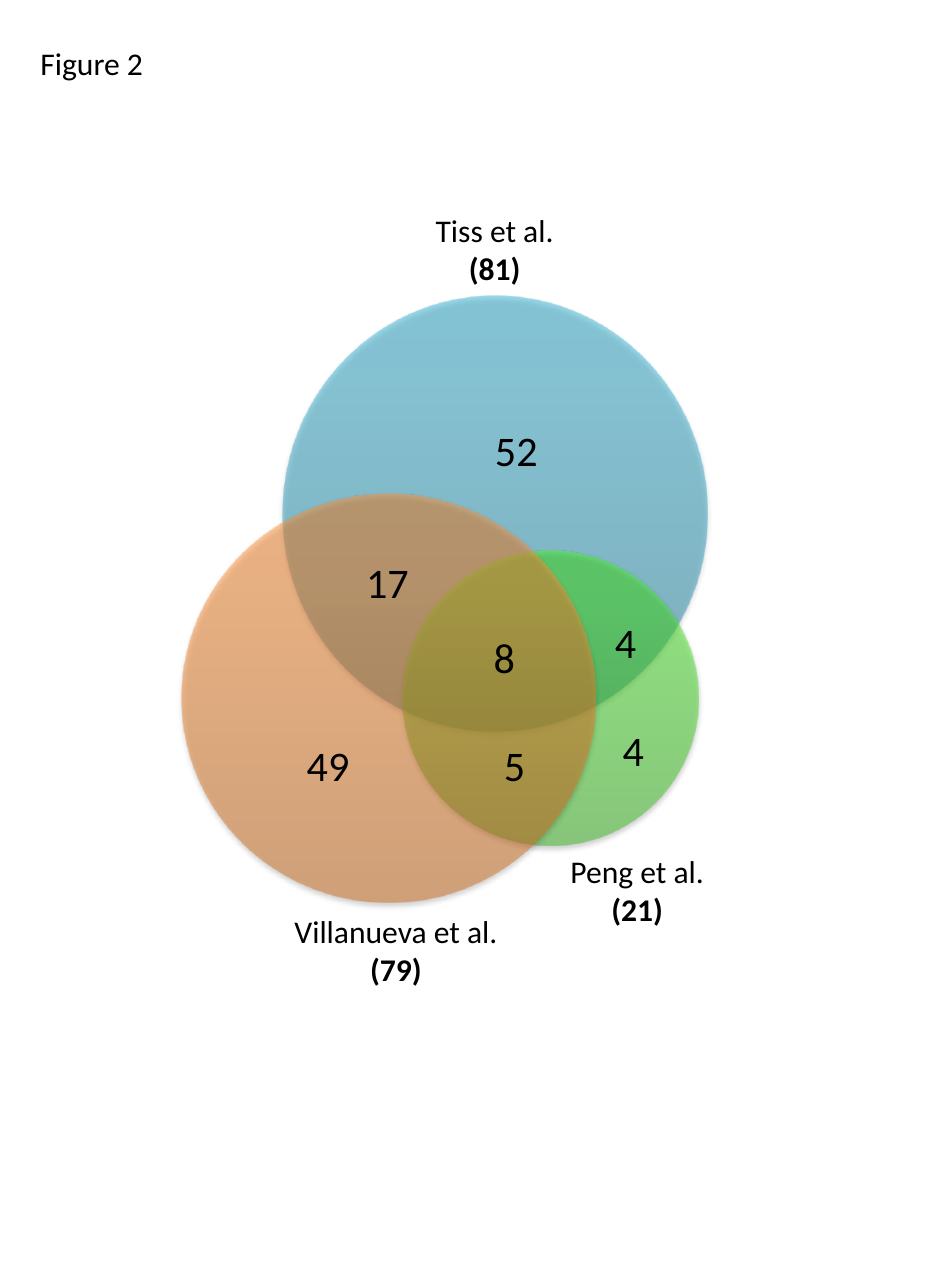
from pptx import Presentation, oxml
from pptx import util as u
from pptx.dml.color import RGBColor
from pptx.enum import shapes, text
from pptx.oxml.ns import nsdecls

# Content: sizes are left, top, width, height in inches
SLIDE_SIZE = (7.52, 10.2)
TITLE = ("Figure 2", (0.22, 0.3, 1.02, 0.4))
CIRCLES = [  # box, gradient colours from bottom to top
    ((2.24, 2.34, 3.36, 3.45), ("2A88A2", "37B1D2", "34B4D6")),
    ((3.19, 4.36, 2.34, 2.34), ("3CB923", "4EF02E", "4CF52A")),
    ((1.44, 3.91, 3.27, 3.24), ("CC6E20", "FF9034", "FF9136")),
]
STUDIES = [  # name, total, left, top, width
    ("Tiss et al.", "(81)", 3.34, 1.62, 1.15),
    ("Peng et al.", "(21)", 4.41, 6.7, 1.27),
    ("Villanueva et al.", "(79)", 2.22, 7.17, 1.83),
]
COUNTS = [  # number, left, top
    ("4", 4.77, 4.83), ("17", 2.8, 4.36), ("5", 3.89, 5.81), ("8", 3.81, 4.95),
    ("49", 2.33, 5.81), ("52", 3.82, 3.31), ("4", 4.83, 5.69),
]
STOPS = (0, 80, 100)
COUNT_WIDTHS = {1: 0.37, 2: 0.54}  # by number of digits
STUDY_HEIGHT, COUNT_HEIGHT = 0.71, 0.5
FRAME_FORMAT = {
    "word_wrap": False,
    "auto_size": text.MSO_AUTO_SIZE.SHAPE_TO_FIT_TEXT,
    "vertical_anchor": text.MSO_ANCHOR.TOP,
}


def color(value):
    return RGBColor.from_string(value)


def set_attributes(target, values):
    for name, value in values.items():
        setattr(target, name, value)


def lengths(box):
    return [u.Inches(value) for value in box]


def write_text(shape, lines, size, align):
    """Each line is a (words, bold) pair."""
    frame = shape.text_frame
    set_attributes(frame, FRAME_FORMAT)
    for index, (words, bold) in enumerate(lines):
        paragraph = frame.paragraphs[0] if index == 0 else frame.add_paragraph()
        paragraph.alignment = align
        run = paragraph.add_run()
        run.text = words
        set_attributes(run.font, {"name": "Calibri", "size": u.Pt(size), "bold": bold})
        run.font.color.rgb = color("000000")


def add_circle(group, box, colors):
    circle = group.shapes.add_shape(shapes.MSO_SHAPE.OVAL, *lengths(box))
    circle.line.fill.background()
    # Half-transparent gradient and soft shadow
    stops = "".join(
        f'<a:gs pos="{stop * 1000}"><a:srgbClr val="{color(value)}">'
        '<a:alpha val="50000"/></a:srgbClr></a:gs>'
        for stop, value in zip(STOPS, colors))
    gradient = oxml.parse_xml(
        f'<a:gradFill {nsdecls("a")} rotWithShape="1"><a:gsLst>{stops}</a:gsLst>'
        '<a:lin ang="16200000" scaled="0"/></a:gradFill>')
    shadow = oxml.parse_xml(
        f'<a:effectLst {nsdecls("a")}><a:outerShdw blurRad="{u.Pt(3.1)}" '
        f'dist="{u.Pt(1.8)}" dir="5400000" rotWithShape="0"><a:srgbClr val="{color("000000")}">'
        '<a:alpha val="35000"/></a:srgbClr></a:outerShdw></a:effectLst>')
    properties = circle.element.spPr
    properties.insert(2, gradient)
    properties.append(shadow)


def main():
    presentation = Presentation()
    width, height = lengths(SLIDE_SIZE)
    set_attributes(presentation, {"slide_width": width, "slide_height": height})
    slide = presentation.slides.add_slide(presentation.slide_layouts[5])

    # Title
    words, box = TITLE
    title = slide.shapes.title
    set_attributes(title, dict(zip(("left", "top", "width", "height"), lengths(box))))
    write_text(title, [(words, False)], 18, text.PP_ALIGN.LEFT)

    # Venn circles
    venn = slide.shapes.add_group_shape()
    for box, colors in CIRCLES:
        add_circle(venn, box, colors)

    # Study names with totals
    for name, total, left, top, width in STUDIES:
        label = slide.shapes.add_textbox(*lengths((left, top, width, STUDY_HEIGHT)))
        write_text(label, [(name, False), (total, True)], 18, text.PP_ALIGN.CENTER)

    # Region counts
    for number, left, top in COUNTS:
        box = (left, top, COUNT_WIDTHS[len(number)], COUNT_HEIGHT)
        label = slide.shapes.add_textbox(*lengths(box))
        write_text(label, [(number, False)], 24, text.PP_ALIGN.LEFT)

    presentation.save("out.pptx")


if __name__ == "__main__":
    main()
